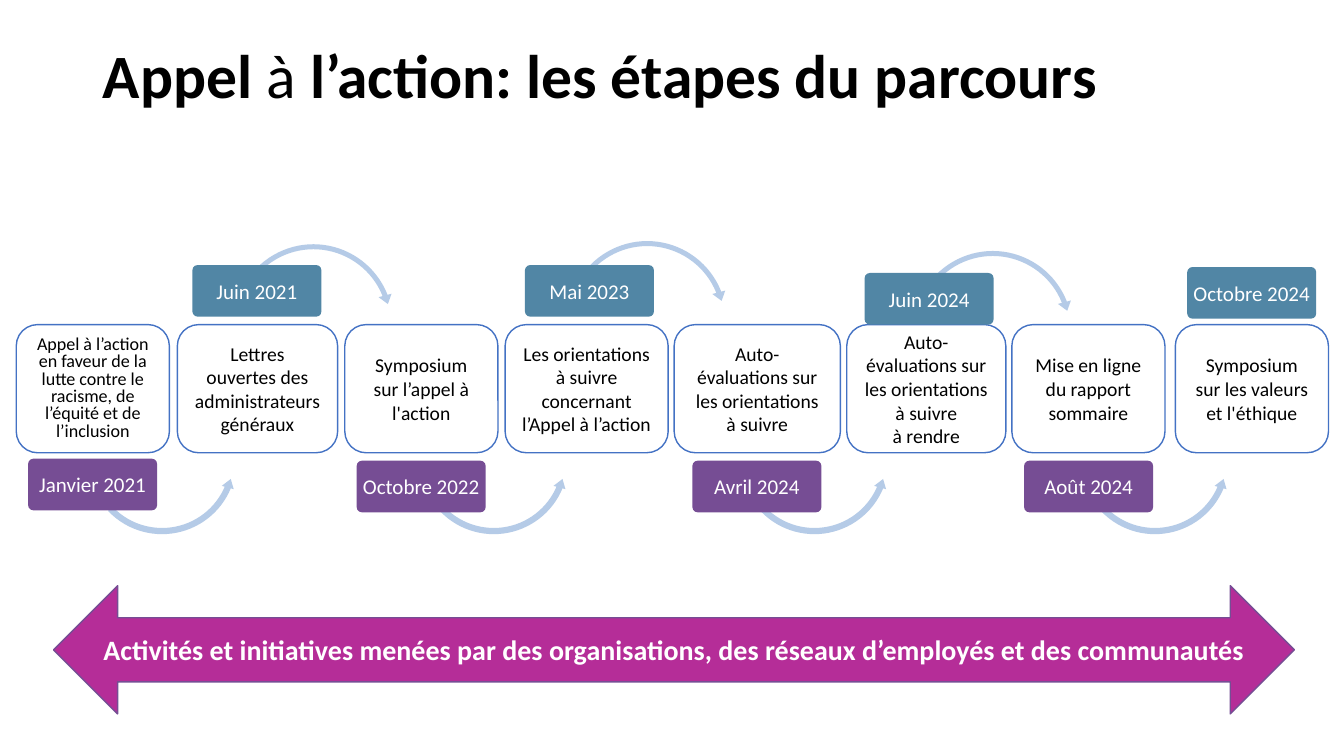
"""Build the slide showing the steps of the call to action."""
from lxml import etree
from pptx import Presentation
from pptx.dml.color import RGBColor
from pptx.enum import shapes, text
from pptx.oxml import ns
from pptx.util import Cm, Pt

KIND = shapes.MSO_SHAPE
BLACK, WHITE, BLUE = "000000", "FFFFFF", "4472C4"
PURPLE, TEAL, PALE, MAGENTA = "764D94", "5186A5", "B5CBE7", "B52D98"

TITLE = [("Appel ", True), ("à", False), (" l’action: les étapes du parcours", True)]
TITLE_BOX = (2.34, 1.02, 29.21, 3.68)
BANNER = "Activités et initiatives menées par des organisations, des réseaux d’employés et des communautés"
BANNER_BOX = (1.35, 14.76, 31.27, 3.23)

STEP_TOP, STEP_H = 8.18, 3.23
TAG_W, TAG_H = 3.25, 1.3
STEPS = [
    (0.41, 3.86, ["Appel à l’action en faveur de la lutte contre le racisme, de l’équité et de l’inclusion"],
     "Janvier 2021", 0.71, 11.56),
    (4.47, 4.04, ["Lettres ouvertes des administrateurs généraux"], "Juin 2021", 4.85, 6.68),
    (8.69, 3.86, ["Symposium sur l’appel à l'action"], "Octobre 2022", 8.99, 11.61),
    (12.73, 4.11, ["Les orientations à suivre concernant l’Appel à l’action"], "Mai 2023", 13.23, 6.68),
    (16.99, 4.19, ["Auto-évaluations sur les orientations à suivre"], "Avril 2024", 17.45, 11.61),
    (21.34, 4.01, ["Auto-évaluations sur les orientations à suivre", "à rendre"], "Juin 2024", 21.79, 6.88),
    (25.5, 3.86, ["Mise en ligne du rapport sommaire"], "Août 2024", 25.81, 11.61),
    (29.62, 3.86, ["Symposium sur les valeurs et l'éthique"], "Octobre 2024", 29.92, 6.73),
]
ARCS = [
    (KIND.LEFT_CIRCULAR_ARROW, 3.91, (0.04, 4.36, 13.77, 81.9, 0.04),
     [(27.15, 9.63), (18.57, 9.63), (10.49, 9.63), (2.13, 9.63)]),
    (KIND.CIRCULAR_ARROW, 4.22, (0.03, 4.03, 203.06, 134.6, 0.04),
     [(22.91, 6.22), (14.2, 5.97), (5.79, 6.05)]),
]


def color(value):
    return RGBColor.from_string(value)


def assign(target, values):
    for name, value in values.items():
        setattr(target, name, value)


def place(sp, box):
    assign(sp, dict(zip(("left", "top", "width", "height"), map(Cm, box))))


def paint(sp, fill, line=None):
    sp.fill.solid()
    sp.fill.fore_color.rgb = color(fill)
    if line:
        sp.line.color.rgb = color(line)
        sp.line.width = Pt(1)
    else:
        sp.line.fill.background()


def add_run(p, words, size, ink, bold=False):
    r = p.add_run()
    r.text = words
    assign(r.font, {"name": "Calibri", "size": Pt(size), "bold": bold})
    r.font.color.rgb = color(ink)


def write(sp, lines, size, ink, bold=False, **spacing):
    tf = sp.text_frame
    assign(tf, {"word_wrap": True, "auto_size": text.MSO_AUTO_SIZE.NONE,
                "vertical_anchor": text.MSO_ANCHOR.MIDDLE})
    for i, words in enumerate(lines):
        p = tf.add_paragraph() if i else tf.paragraphs[0]
        assign(p, {"alignment": text.PP_ALIGN.CENTER, **spacing})
        add_run(p, words, size, ink, bold)


def add_shape(s, kind, box, fill, line=None, adjustments=()):
    sp = s.shapes.add_shape(kind, *map(Cm, box))
    sp.shadow.inherit = False
    paint(sp, fill, line)
    for i, value in enumerate(adjustments):
        sp.adjustments[i] = value
    return sp


def add_title(sp):
    place(sp, TITLE_BOX)
    tf = sp.text_frame
    assign(tf, {"word_wrap": True, "auto_size": text.MSO_AUTO_SIZE.NONE,
                "vertical_anchor": text.MSO_ANCHOR.TOP})
    p = tf.paragraphs[0]
    assign(p, {"alignment": text.PP_ALIGN.LEFT, "line_spacing": 0.9})
    for words, bold in TITLE:
        add_run(p, words, 44, BLACK, bold)


def add_first_step(sp, box, lines):
    place(sp, box)
    geom = etree.SubElement(sp.element.spPr, ns.qn("a:prstGeom"), prst="roundRect")
    etree.SubElement(geom, ns.qn("a:avLst"))
    paint(sp, WHITE, BLUE)
    write(sp, lines, 12.9, BLACK, line_spacing=0.8, space_before=Pt(10))
    for p in sp.text_frame.paragraphs:
        props = p._p.get_or_add_pPr()
        assign_indent = {"marL": "0", "indent": "0"}
        for name, value in assign_indent.items():
            props.set(name, value)
        etree.SubElement(props, ns.qn("a:buNone"))


def add_tag(s, date, left, top):
    fill = PURPLE if top > STEP_TOP else TEAL
    sp = add_shape(s, KIND.ROUNDED_RECTANGLE, (left, top, TAG_W, TAG_H), fill, adjustments=[0.1])
    sides = ("left", "right", "top", "bottom")
    assign(sp.text_frame, {f"margin_{side}": Cm(0.1) for side in sides})
    write(sp, [date], 15, WHITE)


def main():
    prs = Presentation()
    assign(prs, {"slide_width": Cm(33.87), "slide_height": Cm(19.05)})
    s = prs.slides.add_slide(prs.slide_layouts[1])
    add_title(s.shapes.title)
    for kind, size, adjustments, corners in ARCS:
        for left, top in corners:
            add_shape(s, kind, (left, top, size, size), PALE, adjustments=adjustments)
    for i, (left, width, lines, *_) in enumerate(STEPS):
        box = (left, STEP_TOP, width, STEP_H)
        if i == 0:
            add_first_step(s.placeholders[1], box, lines)
        else:
            write(add_shape(s, KIND.ROUNDED_RECTANGLE, box, WHITE, BLUE), lines, 14, BLACK)
    for *_, date, left, top in STEPS:
        add_tag(s, date, left, top)
    banner = add_shape(s, KIND.LEFT_RIGHT_ARROW, BANNER_BOX, MAGENTA, PURPLE)
    write(banner, [BANNER], 20, WHITE, bold=True)
    prs.save("out.pptx")


if __name__ == "__main__":
    main()
